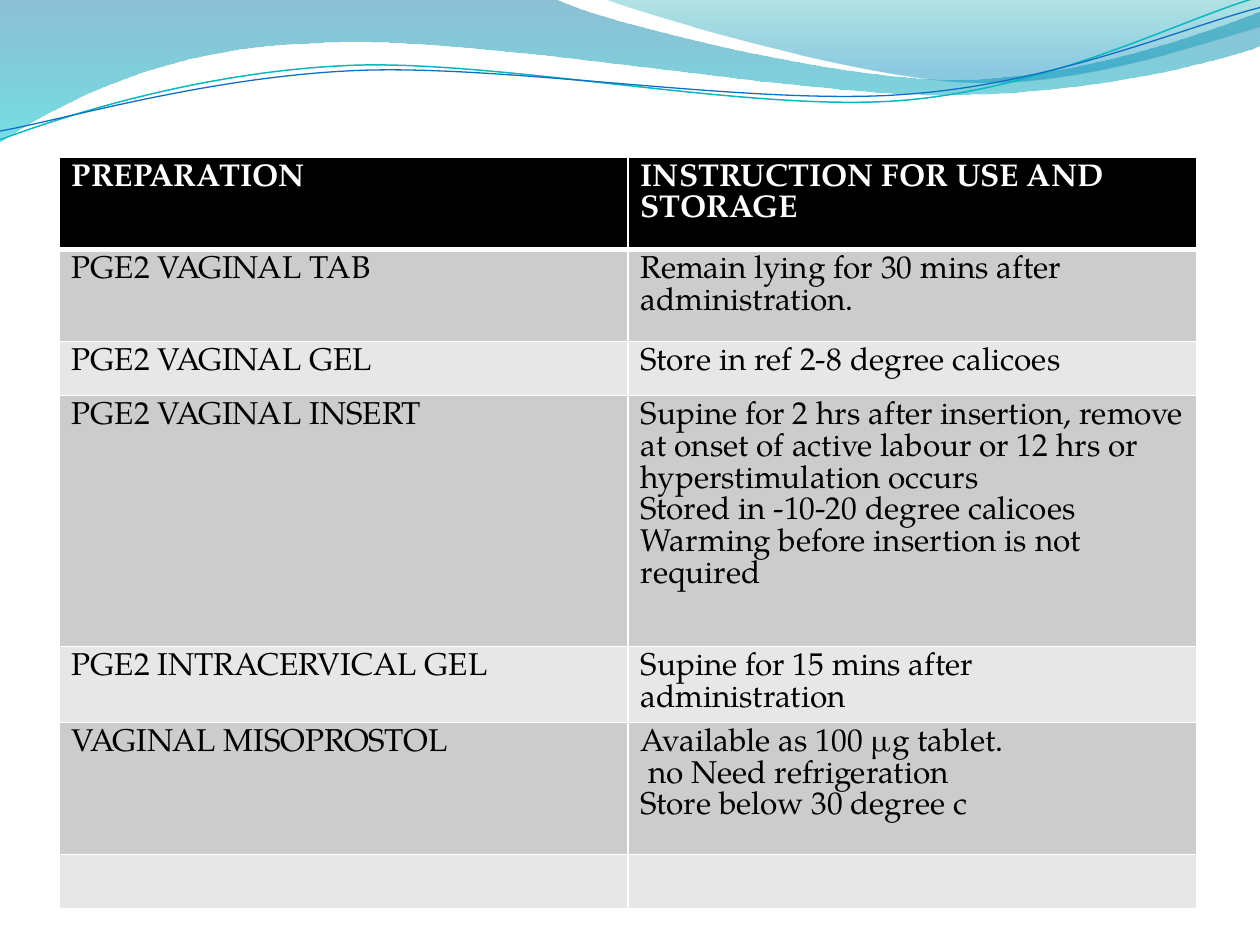
from pptx import Presentation
from pptx.dml.color import RGBColor
from pptx.oxml.ns import qn
from pptx.util import Inches, Pt
from lxml import etree

FONT = "TeX Gyre Pagella"
BLANK_LAYOUT = 6
UNITS_PER_INCH = 10000

# Each wave: start point, then segments of one point (line) or three (Bezier curve).
BANDS = [
    {"start": (0, 0),
     "segments": [[(4.4, -0.01)],
                  [(4.76, 0.17), (6.64, 0.63), (7.58, 0.63)],
                  [(8.53, 0.63), (9.58, 0.26), (10, 0.09)],
                  [(10.01, 0.36)],
                  [(9.83, 0.44), (8.7, 0.76), (7.46, 0.75)],
                  [(6.22, 0.75), (3.82, 0.28), (2.57, 0.34)],
                  [(1.29, 0.36), (0.46, 0.83), (-0.01, 1.13)],
                  [(0, 0)]],
     "stops": [(0, "0074A1", 45), (1, "00C6CF", 55)]},
    {"start": (4.79, -0.01),
     "segments": [[(5.09, 0.11), (6.82, 0.62), (7.69, 0.65)],
                  [(8.56, 0.69), (9.61, 0.32), (10, 0.21)],
                  [(10, 0)],
                  [(4.79, -0.01)]],
     "stops": [(0, "00A1A9", 30), (0.8, "008BBF", 45)]},
]
STRANDS = [
    {"start": (0, 1.11),
     "segments": [[(0.48, 0.93), (1.58, 0.57), (2.77, 0.52)],
                  [(3.95, 0.47), (5.93, 0.89), (7.13, 0.8)],
                  [(8.33, 0.71), (9.38, 0.15), (9.98, -0.02)]],
     "color": "0AB8BF", "width": 0.85},
    {"start": (0, 1.04),
     "segments": [[(0.47, 0.96), (1.64, 0.61), (2.83, 0.56)],
                  [(4.03, 0.51), (5.97, 0.84), (7.17, 0.75)],
                  [(8.36, 0.67), (9.41, 0.21), (10, 0.06)]],
     "color": "0F6FC6", "width": 0.75},
]

# Row height, preparation, instruction paragraphs
ROWS = [
    (0.73, "PREPARATION", ["INSTRUCTION FOR USE AND STORAGE"]),
    (0.73, "PGE2 VAGINAL TAB", ["Remain lying for 30 mins after administration."]),
    (0.43, "PGE2 VAGINAL GEL", ["Store in ref 2-8 degree calicoes"]),
    (1.99, "PGE2 VAGINAL INSERT",
     ["Supine for 2 hrs after insertion, remove at onset of active labour "
      "or 12 hrs or hyperstimulation occurs",
      "Stored in -10-20 degree calicoes",
      "Warming before insertion is not required"]),
    (0.43, "PGE2 INTRACERVICAL GEL", ["Supine for 15 mins after administration"]),
    (1.05, "VAGINAL MISOPROSTOL",
     ["Available as 100 µg tablet.", " no Need refrigeration",
      "Store below 30 degree c"]),
    (0.43, "", [""]),
]
TABLE_LEFT, TABLE_TOP, TABLE_WIDTH = 0.47, 1.25, 9.03
HEADER_FILL, BAND_FILLS = "000000", ("CCCCCC", "E7E7E7")


def rgb(color):
    return RGBColor.from_string(color)


def add_outline(page, wave, close):
    """Build a polygon through all points, then turn each triple into a Bezier curve."""
    points = [(round(x * UNITS_PER_INCH), round(y * UNITS_PER_INCH))
              for x, y in [wave["start"], *sum(wave["segments"], [])]]
    builder = page.shapes.build_freeform(*points[0], scale=Inches(1) / UNITS_PER_INCH)
    builder.add_line_segments(points[1:], close=close)
    shape = builder.convert_to_shape()
    shape.shadow.inherit = False
    lines = iter(list(shape.element.spPr.iter(qn("a:lnTo"))))
    for segment in wave["segments"]:
        first, *others = [next(lines) for _ in segment]
        if others:
            first.tag = qn("a:cubicBezTo")
            for line in others:
                first.append(line[0])
                line.getparent().remove(line)
    return shape


def add_band(page, band):
    shape = add_outline(page, band, close=True)
    shape.line.fill.background()
    shape.fill.gradient()
    shape.fill.gradient_angle = 270
    for stop, (position, color, _) in zip(shape.fill.gradient_stops, band["stops"]):
        stop.position = position
        stop.color.rgb = rgb(color)
    colors = list(shape.element.spPr.iter(qn("a:srgbClr")))
    for element, (_, _, opacity) in zip(colors, band["stops"]):
        etree.SubElement(element, qn("a:alpha"), val=str(opacity * 1000))


def add_strand(page, strand):
    shape = add_outline(page, strand, close=False)
    shape.fill.background()
    shape.line.color.rgb = rgb(strand["color"])
    shape.line.width = Pt(strand["width"])


def set_borders(cell, top, bottom):
    """Draw white borders: 1 pt at the sides, given widths above and below."""
    properties = cell._tc.get_or_add_tcPr()
    widths = {"a:lnL": 1, "a:lnR": 1, "a:lnT": top, "a:lnB": bottom}
    for index, (side, width) in enumerate(widths.items()):
        line = etree.Element(qn(side), w=str(Pt(width)))
        fill = etree.SubElement(line, qn("a:solidFill"))
        etree.SubElement(fill, qn("a:srgbClr"), val="FFFFFF")
        properties.insert(index, line)


def write(cell, paragraphs, size=18, color="000000", bold=False):
    frame = cell.text_frame
    for index, text in enumerate(paragraphs):
        para = frame.add_paragraph() if index else frame.paragraphs[0]
        if not text:
            continue
        span = para.add_run()
        span.text = text
        span.font.name = FONT
        span.font.size = Pt(size)
        span.font.bold = bold
        span.font.color.rgb = rgb(color)


def add_preparation_table(page):
    height = sum(row[0] for row in ROWS)
    table = page.shapes.add_table(
        len(ROWS), 2, Inches(TABLE_LEFT), Inches(TABLE_TOP),
        Inches(TABLE_WIDTH), Inches(height)).table
    for index, (row_height, preparation, instructions) in enumerate(ROWS):
        header = index == 0
        table.rows[index].height = Inches(row_height)
        for cell, paragraphs in zip(table.rows[index].cells, ([preparation], instructions)):
            cell.fill.solid()
            cell.fill.fore_color.rgb = rgb(HEADER_FILL if header else BAND_FILLS[(index - 1) % 2])
            set_borders(cell, top=3 if index == 1 else 1, bottom=3 if header else 1)
            write(cell, paragraphs, color="FFFFFF" if header else "000000", bold=header)


def main():
    deck = Presentation()
    deck.slide_width, deck.slide_height = Inches(10), Inches(7.5)
    page = deck.slides.add_slide(deck.slide_layouts[BLANK_LAYOUT])
    for band in BANDS:
        add_band(page, band)
    for strand in STRANDS:
        add_strand(page, strand)
    add_preparation_table(page)
    deck.save("out.pptx")


if __name__ == "__main__":
    main()
